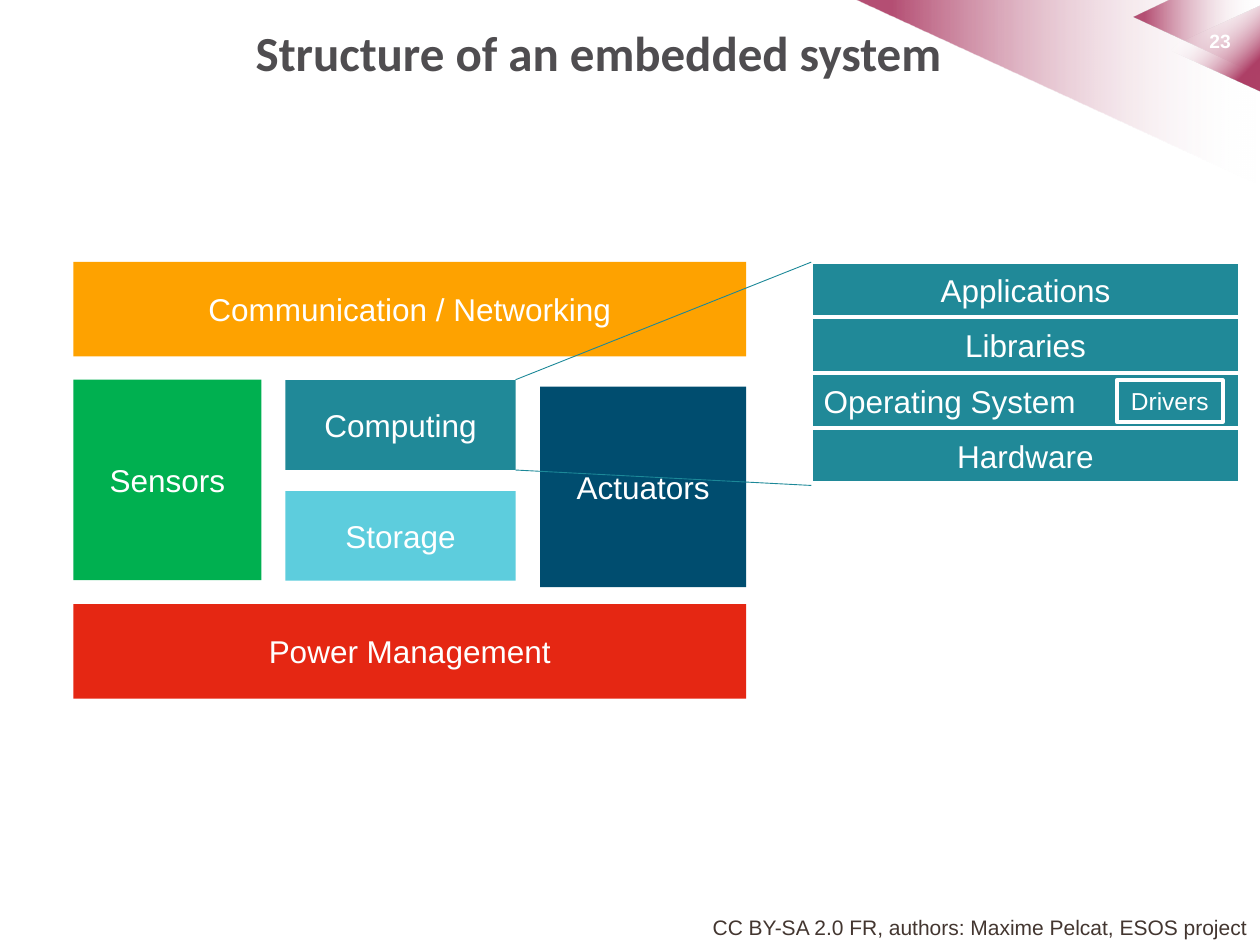
from dataclasses import dataclass

from lxml import etree
from pptx import Presentation
from pptx import util as u
from pptx.dml.color import RGBColor
from pptx.enum import shapes, text
from pptx.oxml import ns


@dataclass(frozen=True)
class Theme:
    white: str = "FFFFFF"
    crimson: str = "9D1747"
    title: str = "4F4D50"
    footer: str = "433630"
    green: str = "00B050"
    red: str = "E52713"
    navy: str = "004D6F"
    teal: str = "208998"
    orange: str = "FEA200"
    aqua: str = "5DCDDD"
    zoom_line: str = "1C8898"
    body_font: str = "Arial"
    title_font: str = "Calibri"
    title_size: int = 28
    label_size: int = 18
    small_label_size: int = 14
    footer_size: int = 12
    number_size: int = 11


THEME = Theme()
LEFT, CENTER, RIGHT = text.PP_ALIGN.LEFT, text.PP_ALIGN.CENTER, text.PP_ALIGN.RIGHT


def color(value):
    return RGBColor.from_string(value)


def points(*values):
    return [u.Pt(value) for value in values]


def write(shape, words, size, tint, align=LEFT, font=THEME.body_font, bold=False):
    para = shape.text_frame.paragraphs[0]
    para.text = words
    para.alignment = align
    para.font.size = u.Pt(size)
    para.font.name = font
    para.font.bold = bold
    para.font.color.rgb = color(tint)


def add_label(page, place, words, size, tint, wrap=True, anchor=text.MSO_ANCHOR.TOP, **style):
    box = page.shapes.add_textbox(*points(*place))
    box.text_frame.word_wrap = wrap
    box.text_frame.vertical_anchor = anchor
    write(box, words, size, tint, **style)


def add_block(page, place, words, fill, outlined=False, size=THEME.label_size, align=CENTER):
    block = page.shapes.add_shape(shapes.MSO_SHAPE.RECTANGLE, *points(*place))
    block.shadow.inherit = False
    block.fill.solid()
    block.fill.fore_color.rgb = color(fill)
    if outlined:
        block.line.color.rgb = color(THEME.white)
        block.line.width = u.Pt(2.25)
    else:
        block.line.fill.background()
    block.text_frame.vertical_anchor = text.MSO_ANCHOR.MIDDLE
    write(block, words, size, THEME.white, align)


def fade(shape, angle, clear_at, dense_at, opacity):
    """Fill with a gradient from clear white to translucent crimson."""
    shape.shadow.inherit = False
    shape.line.fill.background()
    shape.fill.gradient()
    gradient = shape._element.spPr.find(ns.qn("a:gradFill"))
    for child in list(gradient):
        gradient.remove(child)
    stops = etree.SubElement(gradient, ns.qn("a:gsLst"))
    for position, tint, alpha in ((clear_at, THEME.white, 0), (dense_at, THEME.crimson, opacity)):
        stop = etree.SubElement(stops, ns.qn("a:gs"), pos=str(position * 1000))
        tone = etree.SubElement(stop, ns.qn("a:srgbClr"), val=tint)
        etree.SubElement(tone, ns.qn("a:alpha"), val=str(alpha * 1000))
    etree.SubElement(gradient, ns.qn("a:lin"), ang=str(angle * 60000), scaled="0")


def add_ribbon(page, corners, opacity):
    start, *others = [points(*corner) for corner in corners]
    builder = page.shapes.build_freeform(*start)
    builder.add_line_segments(others, close=True)
    fade(builder.convert_to_shape(), 180, 1, 91, opacity)


def add_corner_decoration(page):
    add_ribbon(page, [(488.9, 0), (720, 0), (720, 105.8)], 75)
    add_ribbon(page, [(648, 10), (669, 0), (720, 0), (720, 43.2)], 73)
    triangle = page.shapes.add_shape(
        shapes.MSO_SHAPE.ISOSCELES_TRIANGLE, *points(668.9, 0.7, 49, 54))
    triangle.rotation = 270
    fade(triangle, 135, 27, 81, 82)


def add_zoom_line(page, *ends):
    line = page.shapes.add_connector(shapes.MSO_CONNECTOR.STRAIGHT, *points(*ends))
    line.line.color.rgb = color(THEME.zoom_line)
    line.line.width = u.Pt(0.5)
    etree.SubElement(line._element.spPr, ns.qn("a:effectLst"))


def add_system(page):
    left, width, bar_height = 41.9, 384.5, 54
    middle, middle_width, middle_height = 163.1, 131.5, 51.3
    side_height = 114.6
    blocks = [
        ("Sensors", THEME.green, (left, 216.9, 107.5, side_height)),
        ("Power Management", THEME.red, (left, 345.2, width, bar_height)),
        ("Actuators", THEME.navy, (308.6, 221, 117.8, side_height)),
        ("Computing", THEME.teal, (middle, 217.3, middle_width, middle_height)),
        ("Communication / Networking", THEME.orange, (left, 149.6, width, bar_height)),
        ("Storage", THEME.aqua, (middle, 280.6, middle_width, middle_height)),
    ]
    for words, fill, place in blocks:
        add_block(page, place, words, fill)


def add_computing_stack(page):
    left, top, width, height = 463.6, 149.8, 244.8, 31.6
    layers = [("Applications", CENTER), ("Libraries", CENTER),
              ("Operating System", LEFT), ("Hardware", CENTER)]
    for row, (words, align) in reversed(list(enumerate(layers))):
        add_block(page, (left, top + row * height, width, height), words,
                  THEME.teal, outlined=True, align=align)
    add_block(page, (638.2, 217.3, 60.6, 23.8), "Drivers", THEME.teal,
              outlined=True, size=THEME.small_label_size)
    add_zoom_line(page, 294.6, 217, left, top)
    add_zoom_line(page, 294.6, 268.6, left, 277.4)


def main():
    deck = Presentation()
    deck.slide_width, deck.slide_height = points(720, 540)
    page = deck.slides.add_slide(deck.slide_layouts[6])
    add_corner_decoration(page)
    add_label(page, (684, 13, 36, 28.8), "23", THEME.number_size, THEME.white, bold=True)
    add_label(page, (396.7, 519.1, 323.3, 21.6),
              "CC BY-SA 2.0 FR, authors: Maxime Pelcat, ESOS project",
              THEME.footer_size, THEME.footer, wrap=False, align=RIGHT)
    add_label(page, (139, 7.2, 509, 44.6), "Structure of an embedded system",
              THEME.title_size, THEME.title, anchor=text.MSO_ANCHOR.MIDDLE,
              font=THEME.title_font, bold=True)
    add_system(page)
    add_computing_stack(page)
    deck.save("out.pptx")


if __name__ == "__main__":
    main()
